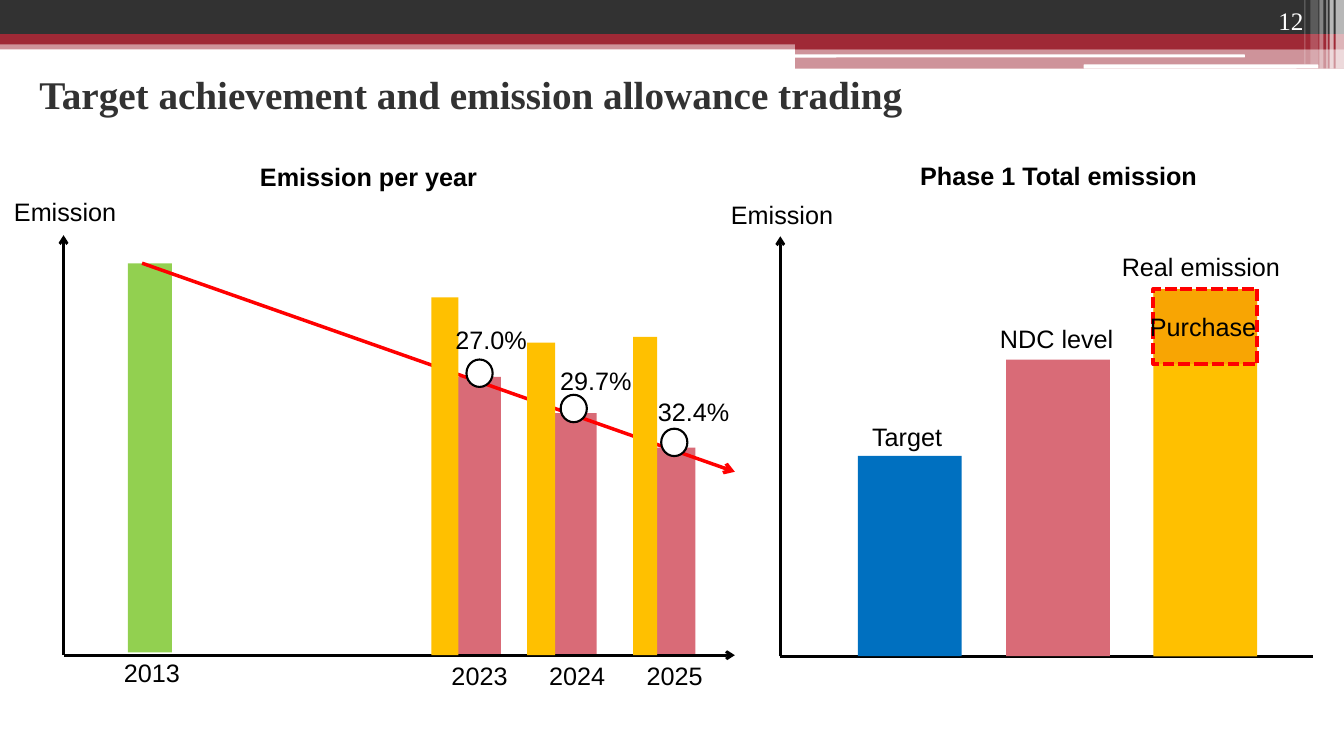
from lxml import etree
from pptx import Presentation
from pptx.dml.color import RGBColor
from pptx.enum.dml import MSO_LINE
from pptx.enum.shapes import MSO_CONNECTOR, MSO_SHAPE
from pptx.enum.text import MSO_ANCHOR, MSO_AUTO_SIZE, PP_ALIGN
from pptx.oxml.ns import qn
from pptx.util import Pt

RECTANGLE = MSO_SHAPE.RECTANGLE
ROUNDED = MSO_SHAPE.ROUNDED_RECTANGLE
OVAL = MSO_SHAPE.OVAL
STRAIGHT = MSO_CONNECTOR.STRAIGHT
SHORT_DASH = MSO_LINE.SQUARE_DOT
MIDDLE, BOTTOM = MSO_ANCHOR.MIDDLE, MSO_ANCHOR.BOTTOM
LEFT, CENTER, RIGHT = PP_ALIGN.LEFT, PP_ALIGN.CENTER, PP_ALIGN.RIGHT
GROW = MSO_AUTO_SIZE.SHAPE_TO_FIT_TEXT

BLACK, WHITE, RED = "000000", "FFFFFF", "FF0000"
CHARCOAL, CRIMSON = "323232", "9F2936"
ROSE, AMBER, GREEN, BLUE, ORANGE = "D96B77", "FFC000", "92D050", "0070C0", "F07F09"

YEAR_BASE = 468
TOTAL_BASE = 468.8
LABEL_HEIGHT = 29.08

# left, top, width, height, colour, opacity in percent
HEADER_BANDS = [
    (0, 28.8, 960, 6.5, CRIMSON, 50),
    (0, 0, 960, 24.5, CHARCOAL, 100),
    (0, 24.5, 960, 7.2, CRIMSON, 100),
    (568, 28.1, 392, 7.2, CRIMSON, 100),
    (568, 34.6, 392, 14.4, CRIMSON, 50),
]
HEADER_GAPS = [(567.4, 38.9, 321.8, 2.2), (774, 46.1, 167.8, 2.9)]
# left, width, height, opacity in percent
HEADER_STRIPES = [
    (954, 6, 49, 65), (949.7, 2.9, 49, 65), (947.5, 0.8, 49, 60),
    (942.5, 2.9, 49, 40), (936, 5.8, 46, 20), (931.7, 0.8, 46, 30),
]
# left, top, width
NDC_BARS = [(326.9, 269.3, 31), (395.3, 295.2, 31), (465.8, 319.7, 31)]
REAL_BARS = [(308.2, 212.4, 19.2), (376.6, 244.8, 20), (452.2, 240.7, 17.3)]
MARKERS = [(333.2, 256.8), (400.5, 282), (472.3, 306.2)]
REDUCTIONS = [("27.0%", 318.2, 227.8), ("29.7%", 393, 257.2), ("32.4%", 462.8, 279.4)]
TOTAL_BARS = [(718.6, 257, ROSE), (612.8, 325.7, BLUE), (823.8, 206.5, AMBER)]
LABELS = [
    ("2013", 81.4, 466), ("Real emission", 794.2, 175.9),
    ("NDC level", 707.2, 227.5), ("Target", 615.8, 297.4),
    ("Emission", 2.9, 136.8), ("Emission", 515, 139),
]


def rgb(color):
    return RGBColor.from_string(color)


def add_box(slide, kind, left, top, width, height, color, opacity=100):
    """Add a filled preset shape without outline."""
    box = slide.shapes.add_shape(kind, Pt(left), Pt(top), Pt(width), Pt(height))
    box.shadow.inherit = False
    box.fill.solid()
    box.fill.fore_color.rgb = rgb(color)
    box.line.fill.background()
    if opacity < 100:
        fill = box.fill._xPr.find(qn("a:solidFill"))
        etree.SubElement(fill[0], qn("a:alpha"), val=str(opacity * 1000))
    return box


def outline(box, color, width):
    box.line.color.rgb = rgb(color)
    box.line.width = Pt(width)


def add_bar(slide, left, top, width, color, base=YEAR_BASE):
    add_box(slide, RECTANGLE, left, top, width, base - top, color)


def add_line(slide, start, end, color=BLACK, width=2, arrow=True):
    line = slide.shapes.add_connector(STRAIGHT, *map(Pt, start + end))
    outline(line, color, width)
    if arrow:
        etree.SubElement(line.line._get_or_add_ln(), qn("a:tailEnd"), type="arrow")
    etree.SubElement(line._element.spPr, qn("a:effectLst"))


def format_text(shape, text, size, font_name, color, bold, align):
    frame = shape.text_frame
    frame.word_wrap = True
    frame.text = text
    para = frame.paragraphs[0]
    para.alignment = align
    font = para.runs[0].font
    font.size = Pt(size)
    font.name = font_name
    font.bold = bold
    font.color.rgb = rgb(color)


def add_label(slide, text, left, top, width=154, bold=False, align=LEFT):
    box = slide.shapes.add_textbox(Pt(left), Pt(top), Pt(width), Pt(LABEL_HEIGHT))
    format_text(box, text, 18, "Arial", BLACK, bold, align)
    box.text_frame.auto_size = GROW


def add_header(slide):
    for left, top, width, height, color, opacity in HEADER_BANDS:
        add_box(slide, RECTANGLE, left, top, width, height, color, opacity)
    for left, top, width, height in HEADER_GAPS:
        add_box(slide, ROUNDED, left, top, width, height, WHITE)
    for left, width, height, opacity in HEADER_STRIPES:
        add_box(slide, RECTANGLE, left, 0, width, height, WHITE, opacity)

    number = slide.shapes.add_textbox(Pt(858.2), Pt(0), Pt(80), Pt(28.8))
    format_text(number, "12", 18, "Times New Roman", WHITE, False, RIGHT)
    number.text_frame.vertical_anchor = BOTTOM

    title = slide.shapes.title
    title.left, title.top, title.width, title.height = map(Pt, (20.9, 25.2, 864, 84.2))
    format_text(title, "Target achievement and emission allowance trading",
                28, "Times New Roman", CHARCOAL, True, LEFT)
    title.text_frame.vertical_anchor = MIDDLE


def add_yearly_chart(slide):
    for left, top, width in NDC_BARS:
        add_bar(slide, left, top, width, ROSE)
    origin = (45.4, YEAR_BASE)
    add_line(slide, origin, (45.4, 168))
    add_line(slide, origin, (524.9, YEAR_BASE))
    add_bar(slide, 91.4, 188.2, 31.5, GREEN, base=466)
    add_line(slide, (101.5, 188), (524.9, 337), RED, 2.5)
    for left, top in MARKERS:
        marker = add_box(slide, OVAL, left, top, 18.7, 19.6, WHITE)
        outline(marker, BLACK, 1.5)
    for left, top, width in REAL_BARS:
        add_bar(slide, left, top, width, AMBER)
    for index, year in enumerate(("2023", "2024", "2025")):
        add_label(slide, year, 315.4 + 69.7 * index, 468.2)
    for text, left, top in REDUCTIONS:
        add_label(slide, text, left, top)
    add_label(slide, "Emission per year", 178.6, 111.8, 222.5, bold=True)


def add_total_chart(slide):
    origin = (557.4, TOTAL_BASE)
    add_line(slide, origin, (938, TOTAL_BASE), arrow=False)
    add_line(slide, origin, (557.4, 168.8))
    for left, top, color in TOTAL_BARS:
        add_bar(slide, left, top, 74.2, color, TOTAL_BASE)
    purchase = add_box(slide, RECTANGLE, 823.8, 206.5, 74.2, 53.5, ORANGE, 41)
    outline(purchase, RED, 2.75)
    purchase.line.dash_style = SHORT_DASH
    add_label(slide, "Phase 1 Total emission", 650.2, 111.1, 222.5, bold=True)
    add_label(slide, "Purchase", 808.6, 218.9, 101.5, align=CENTER)


def main():
    deck = Presentation()
    deck.slide_width, deck.slide_height = Pt(960), Pt(540)
    slide = deck.slides.add_slide(deck.slide_layouts[5])
    add_header(slide)
    add_yearly_chart(slide)
    add_total_chart(slide)
    for text, left, top in LABELS:
        add_label(slide, text, left, top)
    deck.save("out.pptx")


if __name__ == "__main__":
    main()
